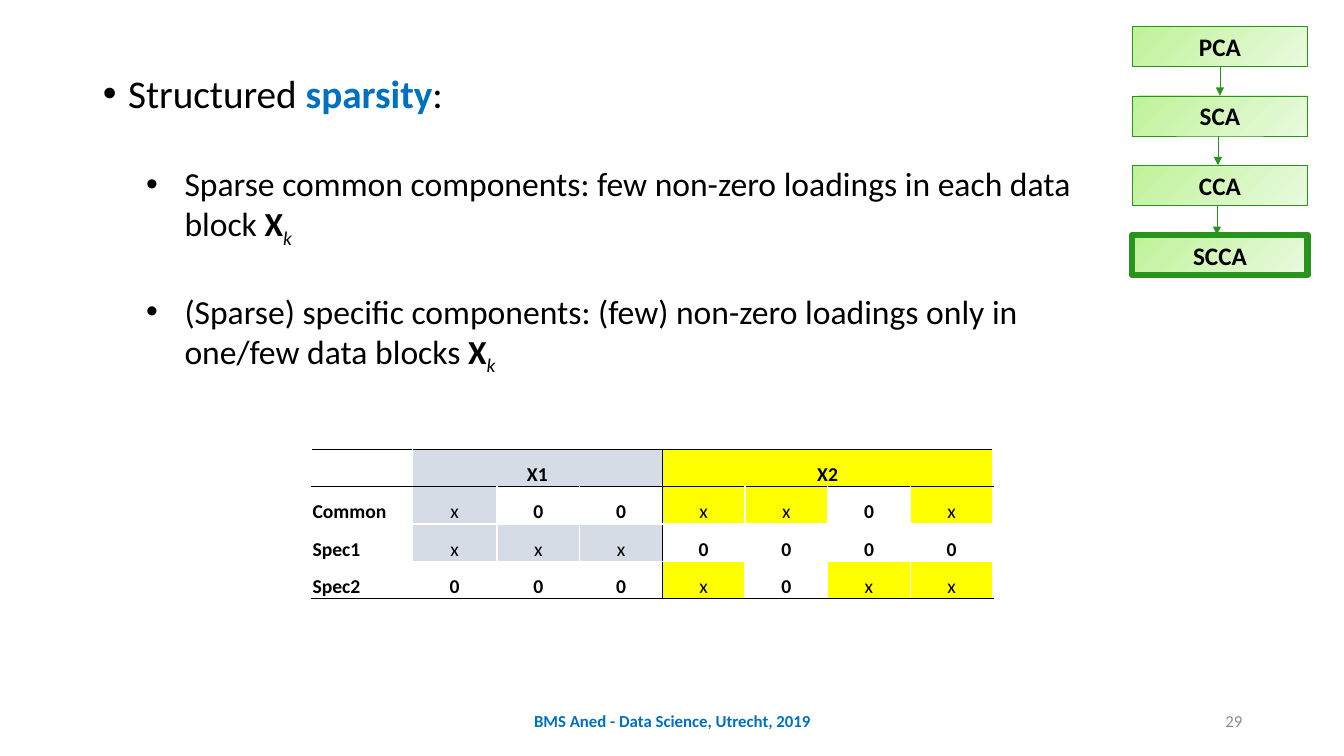
"""Build the slide on structured sparsity with its method chain and loading table."""
from lxml.etree import SubElement
from pptx import Presentation
from pptx.dml.color import RGBColor
from pptx.enum.shapes import MSO_CONNECTOR as Link, MSO_SHAPE as Shape
from pptx.enum.text import MSO_ANCHOR as Anchor, MSO_AUTO_SIZE as Fit, PP_ALIGN as Align
from pptx.oxml.ns import qn
from pptx.util import Inches, Pt

BLACK = RGBColor(0x00, 0x00, 0x00)
WHITE = RGBColor(0xFF, 0xFF, 0xFF)
BLUE = RGBColor(0x00, 0x70, 0xC0)
GRAY = RGBColor(0x8C, 0x8C, 0x8C)
STEEL = RGBColor(0xD6, 0xDC, 0xE5)
YELLOW = RGBColor(0xFF, 0xFF, 0x00)
GREEN = RGBColor(0x28, 0x93, 0x1D)
LIME = RGBColor(0xBE, 0xF2, 0x97)
MINT = RGBColor(0xEA, 0xFA, 0xE0)


def write(par, text, size, color=BLACK, **form):
    run = par.add_run()
    run.text = text
    run.font.color.rgb = color
    for name, value in {"name": "Calibri", "size": Pt(size), **form}.items():
        setattr(run.font, name, value)
    return run


def add(node, tag, **attrs):
    return SubElement(node, qn(tag), attrs)


deck = Presentation()
deck.slide_width, deck.slide_height = Inches(13.33), Inches(7.5)
slide = deck.slides.add_slide(deck.slide_layouts[1])
shapes = slide.shapes
title = shapes.title.element
title.getparent().remove(title)

body = slide.placeholders[1]
place = {"left": 0.92, "top": 0.69, "width": 9.82, "height": 6.07}
for name, value in place.items():
    setattr(body, name, Inches(value))
frame = body.text_frame
frame.auto_size = Fit.NONE
frame.vertical_anchor = Anchor.TOP

points = [
    (0, 10, 0.25, 0.25, 28, "Structured "),
    (1, 36, 0.81, 0.38, 24,
     "Sparse common components: few non-zero loadings in each data block "),
    (1, 36, 0.81, 0.38, 24,
     "(Sparse) specific components: (few) non-zero loadings only in one/few data blocks "),
]
for i, (level, gap, left, hang, size, text) in enumerate(points):
    par = frame.add_paragraph() if i else frame.paragraphs[0]
    form = {"level": level, "line_spacing": 0.9, "space_before": Pt(gap),
            "space_after": Pt(0), "alignment": Align.LEFT}
    for name, value in form.items():
        setattr(par, name, value)
    props = par._p.get_or_add_pPr()
    props.set("marL", str(Inches(left)))
    props.set("indent", str(-Inches(hang)))
    add(props, "a:buFont", typeface="Arial")
    add(props, "a:buChar", char="•")
    write(par, text, size)
    if level:
        write(par, "X", size, bold=True)
        sub = write(par, "k", size, italic=True)
        sub._r.get_or_add_rPr().set("baseline", "-25000")
    else:
        write(par, "sparsity", size, BLUE, bold=True)
        write(par, ":", size)

notes = [
    (4.42, 4.5, "BMS Aned - Data Science, Utrecht, 2019", Align.CENTER, BLUE, True),
    (9.42, 3, "29", Align.RIGHT, GRAY, False),
]
for left, width, text, align, color, bold in notes:
    box = shapes.add_textbox(Inches(left), Inches(6.95), Inches(width), Inches(0.4))
    frame = box.text_frame
    frame.word_wrap = True
    frame.vertical_anchor = Anchor.MIDDLE
    par = frame.paragraphs[0]
    par.alignment = align
    write(par, text, 12, color, bold=bold)

rows = [
    ["", "X1", "", "", "X2", "", "", ""],
    ["Common", "x", "0", "0", "x", "x", "0", "x"],
    ["Spec1", "x", "x", "x", "0", "0", "0", "0"],
    ["Spec2", "0", "0", "0", "x", "0", "x", "x"],
]
widths = [1, 0.84] + [0.82] * 6
table = shapes.add_table(len(rows), len(widths), Inches(3.09), Inches(4.46),
                         Inches(sum(widths)), Inches(1.48)).table
table.first_row = table.horz_banding = False
for col, width in zip(table.columns, widths):
    col.width = Inches(width)
for row in table.rows:
    row.height = Inches(0.37)
for first, last in ((1, 3), (4, 7)):
    table.cell(0, first).merge(table.cell(0, last))

trim = {"margin_left": Inches(0.01), "margin_right": Inches(0.01),
        "margin_top": Inches(0.01), "margin_bottom": 0,
        "vertical_anchor": Anchor.BOTTOM}
for r, texts in enumerate(rows):
    for c, text in enumerate(texts):
        cell = table.cell(r, c)
        for name, value in trim.items():
            setattr(cell, name, value)
        par = cell.text_frame.paragraphs[0]
        par.alignment = Align.CENTER if c else Align.LEFT
        if text:
            write(par, text, 14, bold=text != "x")
        dark = {"a:lnL": c == 4, "a:lnR": c + cell.span_width - 1 in (3,),
                "a:lnT": r < 2, "a:lnB": r in (0, 3)}
        for tag, black in dark.items():
            edge = add(cell._tc.get_or_add_tcPr(), tag, w=str(Pt(1)))
            ink = add(edge, "a:solidFill")
            add(ink, "a:srgbClr", val=str(BLACK if black else WHITE))
        if c and (r == 0 or text == "x"):
            cell.fill.solid()
            cell.fill.fore_color.rgb = STEEL if c < 4 else YELLOW
        else:
            cell.fill.background()

step, high = 0.69, 0.4
chain = [("PCA", 0.25), ("SCA", 0.25), ("CCA", 0.75), ("SCCA", 4.5)]
for i, (text, weight) in enumerate(chain):
    top = 0.26 + i * step
    box = shapes.add_shape(Shape.RECTANGLE, Inches(11.23), Inches(top),
                           Inches(1.74), Inches(high))
    box.shadow.inherit = False
    box.fill.gradient()
    box.fill.gradient_angle = 315
    for stop, color, spot in zip(box.fill.gradient_stops, (LIME, MINT), (0, 1)):
        stop.color.rgb = color
        stop.position = spot
    box.line.color.rgb = GREEN
    box.line.width = Pt(weight)
    box.text_frame.vertical_anchor = Anchor.MIDDLE
    par = box.text_frame.paragraphs[0]
    par.alignment = Align.CENTER
    write(par, text, 18, bold=True)

for i, x in enumerate((12.1, 12.08, 12.07)):
    top = 0.26 + high + i * step
    arrow = shapes.add_connector(Link.STRAIGHT, Inches(x), Inches(top),
                                 Inches(x), Inches(top + step - high))
    arrow.line.color.rgb = GREEN
    arrow.line.width = Pt(0.5)
    add(arrow.line._get_or_add_ln(), "a:tailEnd", type="triangle")
    add(arrow._element.spPr, "a:effectLst")

deck.save("out.pptx")
